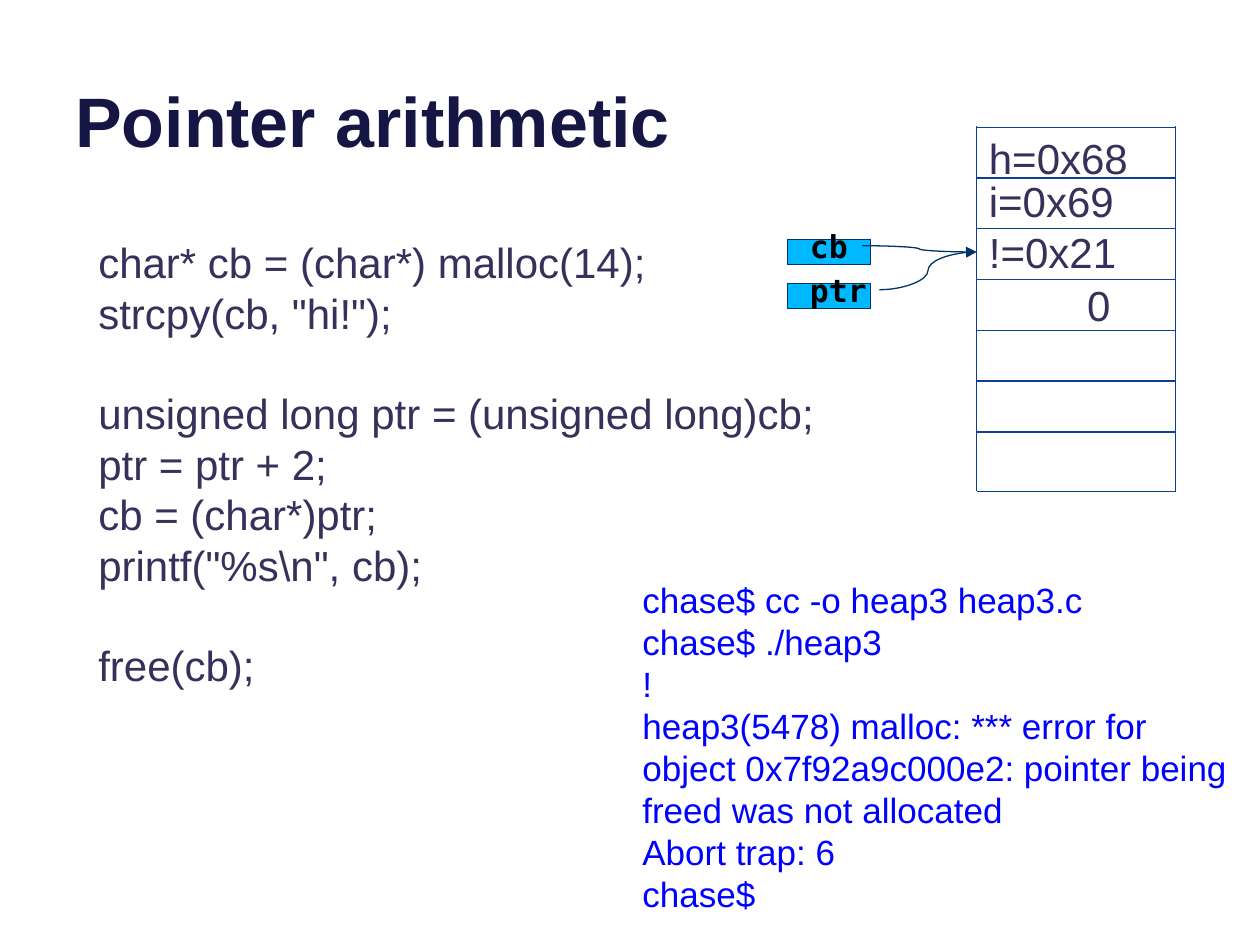
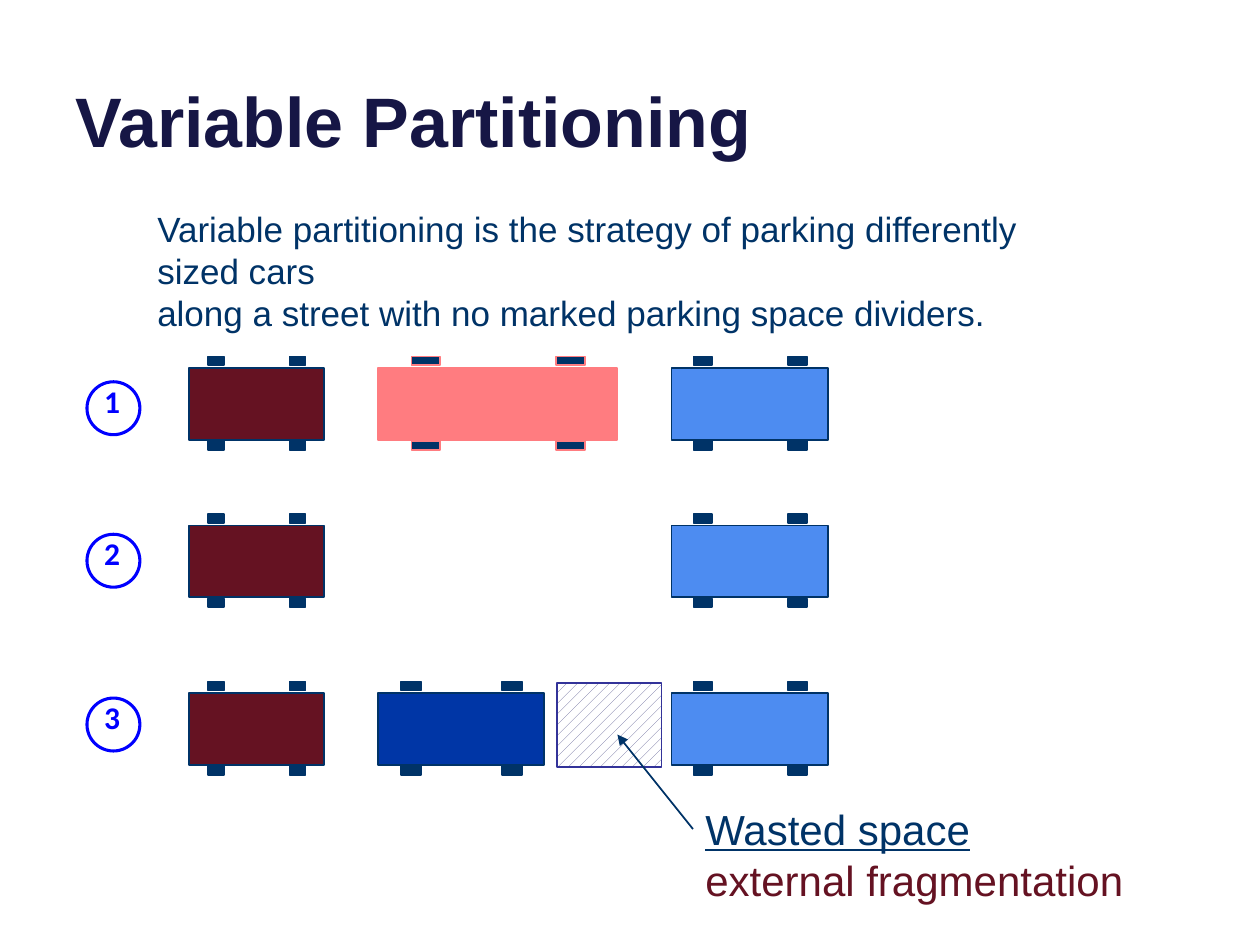
from dataclasses import dataclass

from lxml import etree
from pptx import Presentation
from pptx.dml.color import RGBColor
from pptx.enum.dml import MSO_PATTERN as Pattern
from pptx.enum.shapes import MSO_CONNECTOR as Link, MSO_SHAPE as Form
from pptx.enum.text import MSO_ANCHOR as Anchor, PP_ALIGN as Align
from pptx.oxml.ns import qn
from pptx.util import Inches, Pt

# Shared grid: 10 columns by 7.5 rows
WIDTH, HEIGHT = Inches(10), Inches(7.5)
COL, ROW = WIDTH / 10, HEIGHT / 7.5

# Shared colours and fonts
TITLE, CODE, NAVY, BLUE = "161645", "37305A", "003367", "0000FF"
GRID, CYAN, WINE, BLACK = "0C4093", "00B8FF", "651222", "000000"
SANS, MONO, ROUND = "Arial", "DejaVu Sans Mono", "Calibri"


@dataclass(frozen=True)
class Box:
    x: float
    y: float
    w: float
    h: float

    def emu(self) -> tuple:
        return (round(self.x * COL), round(self.y * ROW),
                round(self.w * COL), round(self.h * ROW))


@dataclass(frozen=True)
class Style:
    size: int
    color: str
    font: str = SANS
    bold: bool = False
    lead: float = 1.2  # line pitch as a multiple of the size; 0 is automatic


@dataclass(frozen=True)
class Car:
    x: float
    w: float
    fill: str
    edge: str = NAVY


@dataclass(frozen=True)
class Street:
    label: str
    y: float
    ring: float
    cars: tuple


HEAD = Style(40, TITLE, bold=True, lead=0)
BODY = Style(24, CODE)
SHELL = Style(20, BLUE)
INTRO = Style(20, NAVY)
WASTE = Style(24, NAVY)
NAME = Style(18, BLACK, MONO, True, 0)
STEP = Style(18, BLUE, ROUND, True, 0)


def rgb(code: str) -> RGBColor:
    return RGBColor.from_string(code)


def write(slide, box: Box, lines: list, style: Style, wrap: bool = True):
    """Add a text box; an empty line becomes space before the next one."""
    area = slide.shapes.add_textbox(*box.emu())
    frame = area.text_frame
    frame.word_wrap = wrap
    gap = False
    para = frame.paragraphs[0]
    for i, line in enumerate(lines):
        if not line:
            gap = True
            continue
        if i:
            para = frame.add_paragraph()
        para.text = line
        font = para.font
        font.name, font.size, font.bold = style.font, Pt(style.size), style.bold
        font.color.rgb = rgb(style.color)
        if style.lead:
            para.line_spacing = Pt(style.size * style.lead)
        if gap:
            para.space_before = Pt(style.size * style.lead)
        gap = False
    return area


def draw(slide, form, box: Box, fill: str, edge: str, width: float = 1):
    shape = slide.shapes.add_shape(form, *box.emu())
    shape.shadow.inherit = False
    if fill:
        shape.fill.solid()
        shape.fill.fore_color.rgb = rgb(fill)
    else:
        shape.fill.background()
    shape.line.color.rgb = rgb(edge)
    shape.line.width = Pt(width)
    return shape


def link(slide, start: tuple, end: tuple, color: str, width: float = 0.75,
         kind=Link.STRAIGHT, arrow: bool = False):
    (x1, y1), (x2, y2) = start, end
    line = slide.shapes.add_connector(kind, round(x1 * COL), round(y1 * ROW),
                                      round(x2 * COL), round(y2 * ROW))
    line.line.color.rgb = rgb(color)
    line.line.width = Pt(width)
    props = line._element.spPr
    if arrow:
        etree.SubElement(props.find(qn("a:ln")), qn("a:tailEnd"), type="triangle")
    etree.SubElement(props, qn("a:effectLst"))
    return line


def start(deck, title: str):
    slide = deck.slides.add_slide(deck.slide_layouts[6])
    area = write(slide, Box(0.5, -0.37, 9, 1.7), [title], HEAD)
    area.text_frame.vertical_anchor = Anchor.BOTTOM
    return slide


def memory(slide):
    """Draw the stack of cells and the bytes in it."""
    left, right, top, base, step = 7.75, 9.33, 1.01, 3.9, 0.403
    for y in [top + step * i for i in range(7)] + [base]:
        link(slide, (left, y), (right, y), GRID)
    for x in (left, right):
        link(slide, (x, base), (x, 1), GRID)
    for text, x, y, w in (("h=0x68", left, 1, 1.32), ("i=0x69", left, 1.34, 1.2),
                          ("!=0x21", left, 1.75, 1.22), ("0", 8.53, 2.17, 0.39)):
        write(slide, Box(x, y, w, 0.5), [text], BODY, wrap=False)


def pointer(slide, name: str, y: float, w: float):
    """Draw a named variable and its curve into the memory."""
    draw(slide, Form.RECTANGLE, Box(6.25, y, 0.66, 0.2), CYAN, NAVY, 0.75)
    label = write(slide, Box(6.33, y - 0.15, w, 0.4), [name], NAME, wrap=False)
    curve = link(slide, (6.33 + w, y + 0.05), (7.75, 2), NAVY,
                 kind=Link.CURVE, arrow=True)
    curve.begin_connect(label, 3)


def park(slide, car: Car, y: float):
    """Draw a car body with two wheels on each side."""
    draw(slide, Form.RECTANGLE, Box(car.x, y, car.w, 0.57), car.fill, car.edge)
    for share in (0.14, 0.745):
        for drop in (-0.09, 0.58):
            wheel = Box(car.x + share * car.w, y + drop, 0.12 * car.w, 0.07)
            draw(slide, Form.RECTANGLE, wheel, NAVY, car.edge)


def pointers(deck):
    slide = start(deck, "Pointer arithmetic")
    code = write(slide, Box(0.5, 1.83, 6.92, 3.74), [
        "char* cb = (char*) malloc(14);",
        'strcpy(cb, "hi!");',
        "",
        "unsigned long ptr = (unsigned long)cb;",
        "ptr = ptr + 2;",
        "cb = (char*)ptr;",
        'printf("%s\\n", cb);',
        "",
        "free(cb);",
    ], BODY)
    code.text_frame.margin_left = round(0.28 * COL)
    memory(slide)
    pointer(slide, "cb", 1.9, 0.51)
    pointer(slide, "ptr", 2.25, 0.65)
    write(slide, Box(5, 4.54, 5, 2.79), [
        "chase$ cc -o heap3 heap3.c",
        "chase$ ./heap3",
        "!",
        "heap3(5478) malloc: *** error for object 0x7f92a9c000e2: "
        "pointer being freed was not allocated",
        "Abort trap: 6",
        "chase$",
    ], SHELL)


def parking(deck):
    slide = start(deck, "Variable Partitioning")
    write(slide, Box(1.15, 1.6, 7.6, 0.77), [
        "Variable partitioning is the strategy of parking differently sized cars",
        "along a street with no marked parking space dividers.",
    ], INTRO)

    # Three states of the street
    red, sky = Car(1.5, 1.07, WINE), Car(5.33, 1.24, "4D8CF1")
    pink, blue = Car(3, 1.9, "FF7C80", "FF7C80"), Car(3, 1.32, "0036A6")
    for row in (Street("1", 2.92, 3.03, (red, pink, sky)),
                Street("2", 4.17, 4.24, (red, sky)),
                Street("3", 5.5, 5.54, (red, blue, sky))):
        for car in row.cars:
            park(slide, car, row.y)
        step = write(slide, Box(0.64, row.ring - 0.05, 0.5, 0.4), [row.label], STEP)
        step.text_frame.paragraphs[0].alignment = Align.CENTER
        draw(slide, Form.OVAL, Box(0.69, row.ring, 0.42, 0.42), "", BLUE, 1.75)

    # Gap left behind
    gap = draw(slide, Form.RECTANGLE, Box(4.42, 5.42, 0.83, 0.67), "", "333399")
    gap.fill.patterned()
    gap.fill.pattern = Pattern.PERCENT_20
    gap.fill.fore_color.rgb = rgb("666699")
    gap.fill.back_color.rgb = rgb("FFFFFF")
    note = write(slide, Box(5.5, 6.33, 5, 0.91),
                 ["Wasted space", "external fragmentation"], WASTE)
    first, last = note.text_frame.paragraphs
    first.runs[0].font.underline = True
    last.font.color.rgb = rgb(WINE)
    link(slide, (5.5, 6.58), (4.9, 5.83), NAVY, 1, arrow=True)


def main():
    deck = Presentation()
    deck.slide_width, deck.slide_height = WIDTH, HEIGHT
    pointers(deck)
    parking(deck)
    deck.save("out.pptx")


if __name__ == "__main__":
    main()
